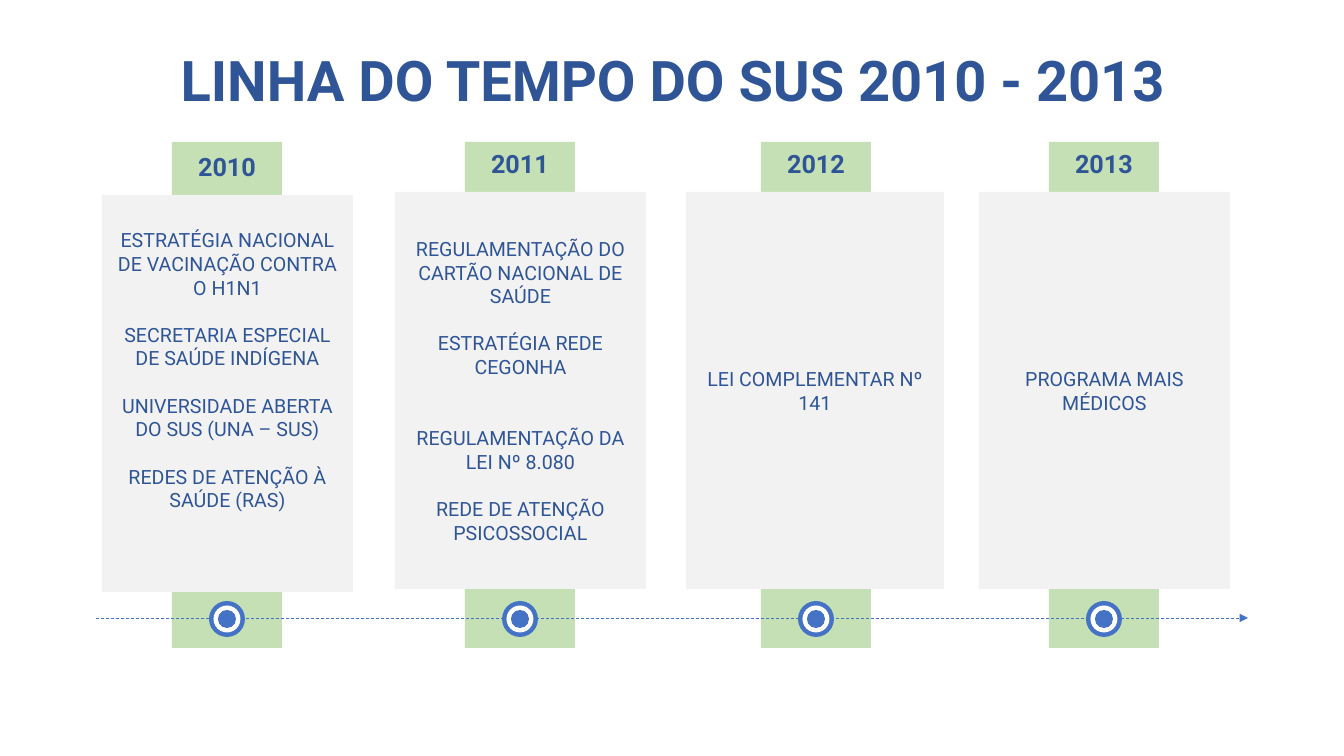
from lxml import etree
from pptx import Presentation
from pptx import util as u
from pptx.dml.color import RGBColor
from pptx.enum import dml, shapes, text
from pptx.oxml.ns import qn

PX = 914400 / 100.8
COLORS = {"navy": "2F5597", "blue": "4472C4", "green": "C5E0B4", "gray": "F2F2F2", "white": "FFFFFF"}
BAND_WIDTH = 110
AXIS_Y = 618
DOT_Y = 619
LINE_GAP = 17

timeline = [
    {"year": "2010", "band": 172, "label_top": 146, "card": (102, 195, 251), "bottom_inset": 52,
     "events": [("ESTRATÉGIA NACIONAL DE VACINAÇÃO CONTRA O H1N1", 0),
                ("SECRETARIA ESPECIAL DE SAÚDE INDÍGENA", 1),
                ("UNIVERSIDADE ABERTA DO SUS (UNA – SUS)", 1),
                ("REDES DE ATENÇÃO À SAÚDE (RAS)", 1)]},
    {"year": "2011", "band": 465, "label_top": 143, "card": (395, 192, 251), "bottom_inset": 5,
     "events": [("REGULAMENTAÇÃO DO CARTÃO NACIONAL DE SAÚDE", 0),
                ("ESTRATÉGIA REDE CEGONHA", 1),
                ("REGULAMENTAÇÃO DA LEI Nº 8.080", 2),
                ("REDE DE ATENÇÃO PSICOSSOCIAL", 1)]},
    {"year": "2012", "band": 761, "label_top": 143, "card": (686, 192, 258), "bottom_inset": 5,
     "events": [("LEI COMPLEMENTAR Nº 141", 0)]},
    {"year": "2013", "band": 1049, "label_top": 143, "card": (979, 192, 251), "bottom_inset": 5,
     "events": [("PROGRAMA MAIS MÉDICOS", 0)]},
]

presentation = Presentation()
presentation.slide_width, presentation.slide_height = u.Emu(round(1344 * PX)), u.Emu(round(756 * PX))
slide = presentation.slides.add_slide(presentation.slide_layouts[6])


def add_box(preset, left, top, width, height, color=None):
    box = [u.Emu(round(value * PX)) for value in (left, top, width, height)]
    if color is None:
        return slide.shapes.add_textbox(*box)
    shape = slide.shapes.add_shape(preset, *box)
    shape.shadow.inherit = False
    shape.fill.solid()
    shape.fill.fore_color.rgb = RGBColor.from_string(COLORS[color])
    shape.line.fill.background()
    return shape


def write(shape, lines, size, bold=False):
    frame = shape.text_frame
    frame.word_wrap = True
    frame.text = "\n".join(lines)
    for paragraph in frame.paragraphs:
        paragraph.alignment = text.PP_ALIGN.CENTER
        for run in paragraph.runs:
            run.font.name = "Roboto"
            run.font.size = u.Pt(size)
            run.font.bold = bold
            run.font.color.rgb = RGBColor.from_string(COLORS["navy"])
    return frame


RECTANGLE = shapes.MSO_SHAPE.RECTANGLE
OVAL = shapes.MSO_SHAPE.OVAL

title = write(add_box(RECTANGLE, 93, 40, 1159, 87), ["LINHA DO TEMPO DO SUS 2010 - 2013"], 40, True)
title.vertical_anchor = text.MSO_ANCHOR.MIDDLE
title.paragraphs[0].line_spacing = 0.9

for stage in timeline:
    add_box(RECTANGLE, stage["band"], 142, BAND_WIDTH, 506, "green")
    left, top, width = stage["card"]
    card = add_box(RECTANGLE, left, top, width, 397, "gray")
    frame = write(card, [event for event, gap in stage["events"]], 14)
    frame.vertical_anchor = text.MSO_ANCHOR.MIDDLE
    frame.margin_bottom = u.Emu(round(stage["bottom_inset"] * PX))
    for paragraph, (event, gap) in zip(frame.paragraphs, stage["events"]):
        paragraph.space_before = u.Pt(gap * LINE_GAP)
    label = add_box(RECTANGLE, stage["band"], stage["label_top"], BAND_WIDTH, 40)
    write(label, [stage["year"]], 18, True)

ends = [u.Emu(round(value * PX)) for value in (96, AXIS_Y, 1248, AXIS_Y)]
axis = slide.shapes.add_connector(shapes.MSO_CONNECTOR.STRAIGHT, *ends)
axis.line.color.rgb = RGBColor.from_string(COLORS["blue"])
axis.line.width = u.Pt(0.5)
axis.line.dash_style = dml.MSO_LINE.DASH
etree.SubElement(axis.line._get_or_add_ln(), qn("a:tailEnd"), type="triangle")
etree.SubElement(axis._element.spPr, qn("a:effectLst"))

for stage in timeline:
    center = stage["band"] + BAND_WIDTH / 2
    for diameter, color in ((36, "blue"), (27, "white"), (18, "blue")):
        add_box(OVAL, center - diameter / 2, DOT_Y - diameter / 2, diameter, diameter, color)

presentation.save("out.pptx")
